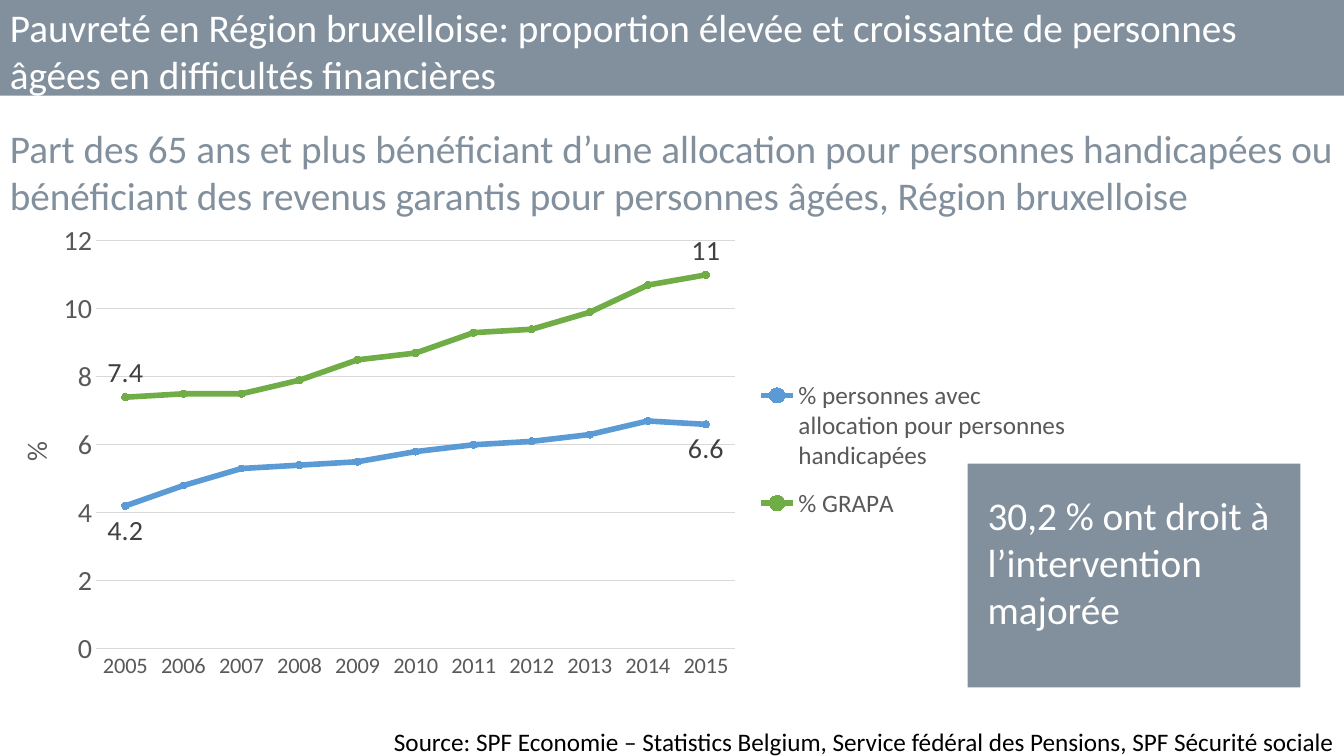
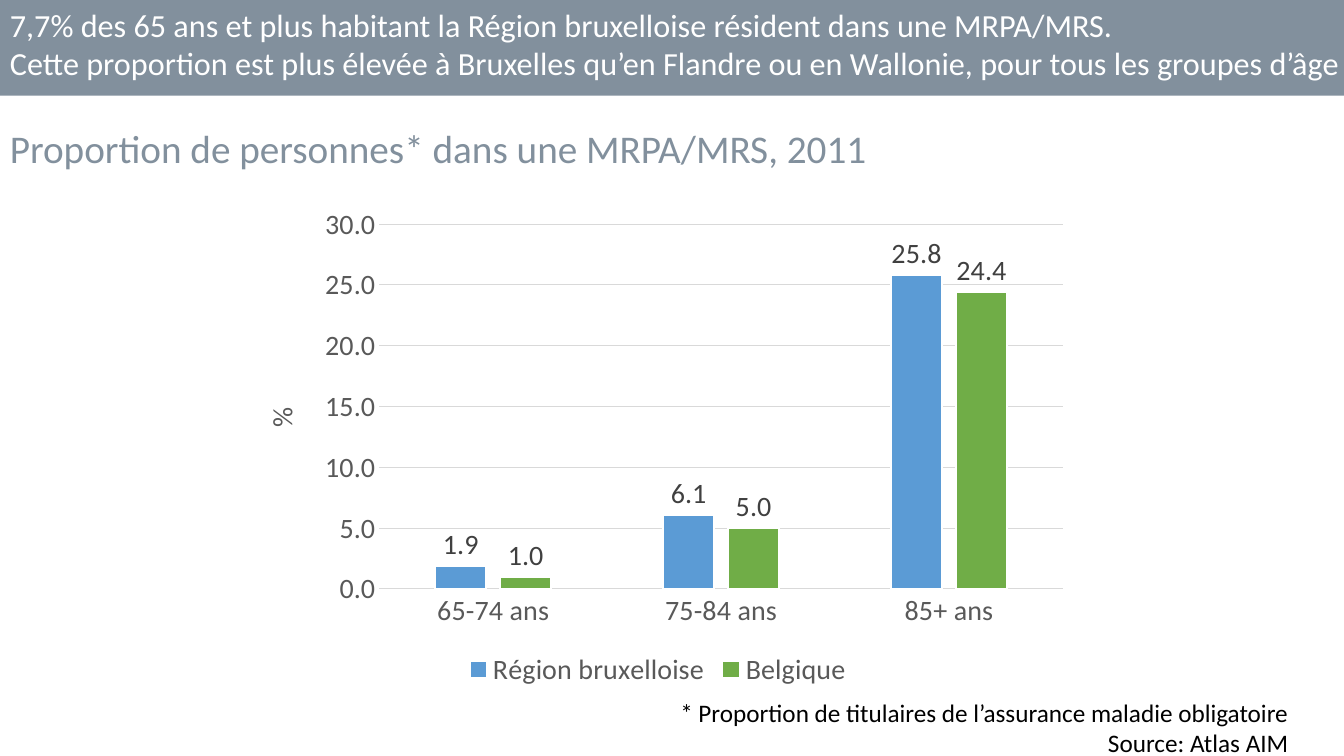
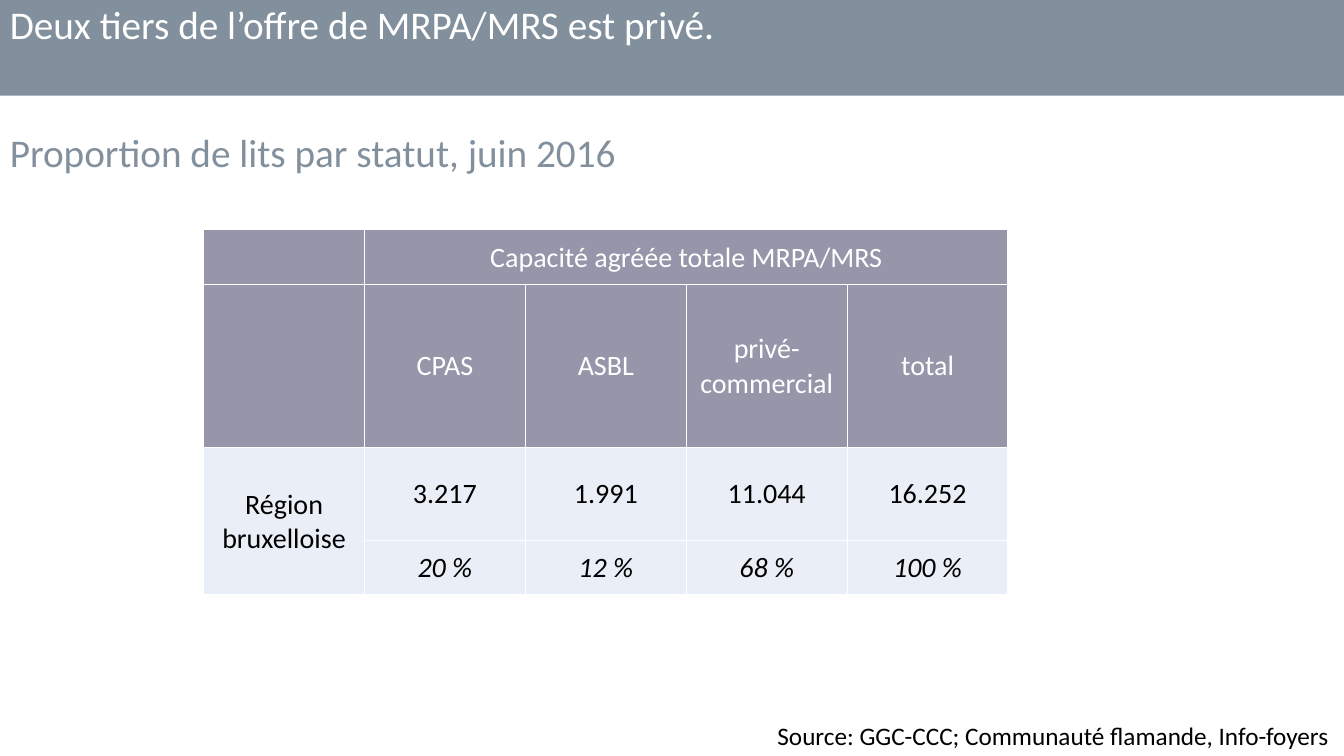
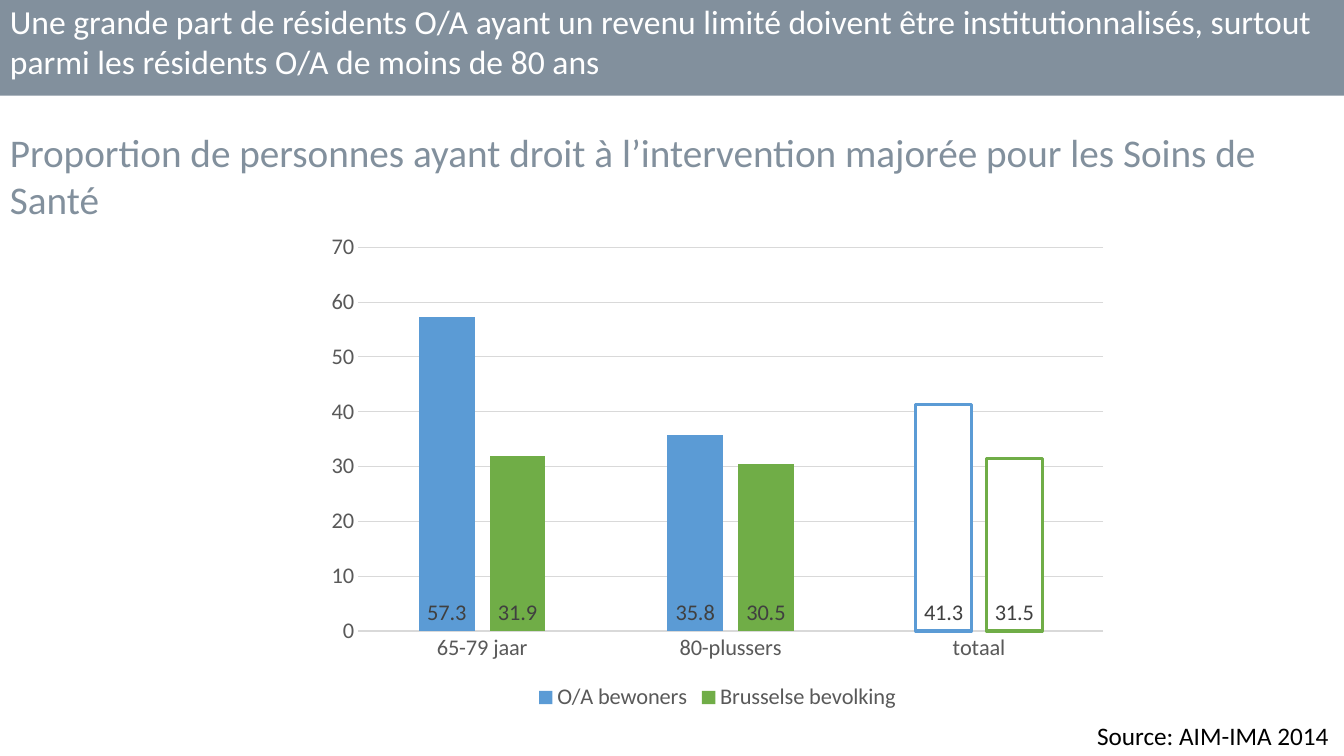
"""Build four slides on older people in the Brussels region: income, care homes and their residents."""
from dataclasses import dataclass
from typing import Optional

from lxml import etree
from pptx import Presentation
from pptx import util as u
from pptx.chart.data import CategoryChartData
from pptx.dml.color import RGBColor
from pptx.enum import chart as charts, shapes, text
from pptx.oxml.ns import qn

SLIDE_WIDTH, SLIDE_HEIGHT = u.Inches(13.33), u.Inches(7.5)
FONT = "Calibri"
SLATE = RGBColor(0x82, 0x90, 0x9D)
WHITE = RGBColor(0xFF, 0xFF, 0xFF)
BLACK = RGBColor(0, 0, 0)
BLUE = RGBColor(0x5B, 0x9B, 0xD5)
GREEN = RGBColor(0x70, 0xAD, 0x47)
AXIS_GREY = RGBColor(0x59, 0x59, 0x59)
LABEL_GREY = RGBColor(0x40, 0x40, 0x40)
GRID_GREY = RGBColor(0xD9, 0xD9, 0xD9)
HEADER_MAUVE = RGBColor(0x96, 0x96, 0xAA)
PALE_BLUE = RGBColor(0xEA, 0xEF, 0xF7)
LEFT, CENTER, RIGHT = text.PP_ALIGN.LEFT, text.PP_ALIGN.CENTER, text.PP_ALIGN.RIGHT


@dataclass(frozen=True)
class Area:
    """A rectangle in percent of the slide's width and height."""
    left: float
    top: float
    width: float
    height: float

    def emu(self) -> tuple[int, int, int, int]:
        """Return left, top, width and height in EMU."""
        return (across(self.left), down(self.top), across(self.width), down(self.height))


@dataclass(frozen=True)
class Caption:
    """Lines of text in one style."""
    area: Area
    lines: tuple[str, ...]
    size: float = 28
    color: RGBColor = SLATE
    align: text.PP_ALIGN = LEFT


@dataclass(frozen=True)
class Series:
    """One coloured data series; label_place is None for the default place."""
    name: str
    values: tuple[float, ...]
    color: RGBColor
    label_place: Optional[charts.XL_LABEL_POSITION] = None


@dataclass(frozen=True)
class Graph:
    """A chart with its scale, type sizes and optional inner layouts."""
    area: Area
    kind: charts.XL_CHART_TYPE
    categories: tuple[str, ...]
    series: tuple[Series, ...]
    top_value: float
    step: float
    category_size: float
    value_size: float
    legend_size: float
    legend_place: charts.XL_LEGEND_POSITION = charts.XL_LEGEND_POSITION.BOTTOM
    unit: str = ""
    number_format: str = "General"
    plot_layout: Optional[tuple[float, ...]] = None
    legend_layout: Optional[tuple[float, ...]] = None


BAND = Area(0, 0, 100, 12.67)
TABLE_AREA = Area(15.15, 30.4, 59.86, 48.27)
ROW_SHARES = (7.2, 21.6, 12.27, 7.2)
TABLE_ROWS = (
    ("", "Capacité agréée totale MRPA/MRS", "", "", ""),
    ("", "CPAS", "ASBL", "privé-\vcommercial", "total"),
    ("Région bruxelloise", "3.217", "1.991", "11.044", "16.252"),
    ("", "20 %", "12 %", "68 %", "100 %"),
)

ALLOWANCES = Graph(
    Area(0.83, 29.6, 79.2, 60.4), charts.XL_CHART_TYPE.LINE_MARKERS,
    tuple(str(year) for year in range(2005, 2016)),
    (Series("% personnes avec allocation pour personnes handicapées",
            (4.2, 4.8, 5.3, 5.4, 5.5, 5.8, 6, 6.1, 6.3, 6.7, 6.6),
            BLUE, charts.XL_LABEL_POSITION.BELOW),
     Series("% GRAPA", (7.4, 7.5, 7.5, 7.9, 8.5, 8.7, 9.3, 9.4, 9.9, 10.7, 11),
            GREEN, charts.XL_LABEL_POSITION.ABOVE)),
    12, 2, 16, 20, 18, charts.XL_LEGEND_POSITION.RIGHT, unit="%",
    plot_layout=(0.08, 0.03, 0.6, 0.9), legend_layout=(0.7, 0.3, 0.3, 0.38))

RESIDENTS = Graph(
    Area(17.55, 26.4, 62.8, 65.2), charts.XL_CHART_TYPE.COLUMN_CLUSTERED,
    ("65-74 ans", "75-84 ans", "85+ ans"),
    (Series("Région bruxelloise", (1.9, 6.1, 25.8), BLUE),
     Series("Belgique", (1, 5, 24.4), GREEN)),
    30, 5, 20, 20, 20, unit="%", number_format="0.0",
    plot_layout=(0.17, 0.05, 0.81, 0.74))

ENTITLED = Graph(
    Area(23.48, 29.6, 59.8, 65.07), charts.XL_CHART_TYPE.COLUMN_CLUSTERED,
    ("65-79 jaar", "80-plussers", "totaal"),
    (Series("O/A bewoners", (57.3, 35.8, 41.3), BLUE, charts.XL_LABEL_POSITION.INSIDE_BASE),
     Series("Brusselse bevolking", (31.9, 30.5, 31.5), GREEN,
            charts.XL_LABEL_POSITION.INSIDE_BASE)),
    70, 10, 16, 16, 16)


def across(share: float) -> int:
    """Turn a percentage of the slide's width into EMU."""
    return round(SLIDE_WIDTH * share / 100)


def down(share: float) -> int:
    """Turn a percentage of the slide's height into EMU."""
    return round(SLIDE_HEIGHT * share / 100)


def style_font(font, size: float, color: RGBColor) -> None:
    """Apply the deck's font at a size and colour."""
    font.name, font.size, font.bold = FONT, u.Pt(size), False
    font.color.rgb = color


def style_line(line, color: RGBColor, width: float) -> None:
    """Give a line a colour and a width in points."""
    line.color.rgb = color
    line.width = u.Pt(width)


def style_fill(fill, color: RGBColor) -> None:
    """Fill with one colour."""
    fill.solid()
    fill.fore_color.rgb = color


def add_panel(page, area: Area) -> None:
    """Draw a plain slate rectangle."""
    panel = page.shapes.add_shape(shapes.MSO_SHAPE.RECTANGLE, *area.emu())
    panel.shadow.inherit = False
    style_fill(panel.fill, SLATE)
    panel.line.fill.background()


def add_caption(page, caption: Caption):
    """Draw a wrapping text box and return it."""
    box = page.shapes.add_textbox(*caption.area.emu())
    frame = box.text_frame
    frame.word_wrap = True
    frame.auto_size = text.MSO_AUTO_SIZE.SHAPE_TO_FIT_TEXT
    frame.text = "\n".join(caption.lines)
    for para in frame.paragraphs:
        para.alignment = caption.align
        style_font(para.font, caption.size, caption.color)
    return box


def add_page(deck, title: Caption, subtitle: Caption, source: Caption):
    """Add a slide with its band, title, subtitle and source."""
    page = deck.slides.add_slide(deck.slide_layouts[6])
    add_panel(page, BAND)
    boxes = [add_caption(page, caption) for caption in (title, subtitle, source)]
    return page, boxes[-1]


def make_title(top: float, height: float, size: float, *lines: str, width: float = 100) -> Caption:
    """Describe a white title on the band."""
    return Caption(Area(0, top, width, height), lines, size, WHITE)


def make_source(left: float, top: float, right: float, height: float, *lines: str) -> Caption:
    """Describe a source note aligned to the right."""
    return Caption(Area(left, top, right - left, height), lines, 18, BLACK, RIGHT)


def make_layout(shares: tuple[float, ...], inner: bool):
    """Build a manual chart layout from shares of the chart's size."""
    layout = etree.Element(qn("c:layout"))
    manual = etree.SubElement(layout, qn("c:manualLayout"))
    settings = [("layoutTarget", "inner")] if inner else []
    settings += [("xMode", "edge"), ("yMode", "edge")]
    settings += zip("xywh", map(str, shares))
    for tag, value in settings:
        etree.SubElement(manual, qn(f"c:{tag}")).set("val", value)
    return layout


def apply_layouts(chart, graph: Graph) -> None:
    """Place the plot and the legend where the graph asks for it."""
    if graph.plot_layout:
        plot_area = chart.element.find(".//" + qn("c:plotArea"))
        for old in plot_area.findall(qn("c:layout")):
            plot_area.remove(old)
        plot_area.insert(0, make_layout(graph.plot_layout, True))
    if graph.legend_layout:
        legend = chart.element.find(".//" + qn("c:legend"))
        for old in legend.findall(qn("c:layout")):
            legend.remove(old)
        legend.find(qn("c:overlay")).addprevious(make_layout(graph.legend_layout, False))


def style_axes(chart, graph: Graph) -> None:
    """Set scale, fonts, lines and title of both axes."""
    category, value = chart.category_axis, chart.value_axis
    for axis, size in ((category, graph.category_size), (value, graph.value_size)):
        axis.major_tick_mark = axis.minor_tick_mark = charts.XL_TICK_MARK.NONE
        style_font(axis.tick_labels.font, size, AXIS_GREY)
    style_line(category.format.line, GRID_GREY, 0.75)
    value.format.line.fill.background()
    value.has_major_gridlines = True
    style_line(value.major_gridlines.format.line, GRID_GREY, 0.75)
    value.minimum_scale, value.maximum_scale, value.major_unit = 0, graph.top_value, graph.step
    value.tick_labels.number_format = graph.number_format
    value.tick_labels.number_format_is_linked = False
    if graph.unit:
        frame = value.axis_title.text_frame
        frame.text = graph.unit
        style_font(frame.paragraphs[0].font, graph.value_size, AXIS_GREY)


def add_graph(page, graph: Graph):
    """Draw a chart frame with axes and legend and return the chart."""
    data = CategoryChartData(number_format=graph.number_format)
    data.categories = graph.categories
    for item in graph.series:
        data.add_series(item.name, item.values)
    chart = page.shapes.add_chart(graph.kind, *graph.area.emu(), data).chart
    chart.has_title = False
    style_font(chart.font, 10, BLACK)
    chart.plots[0].vary_by_categories = False
    style_axes(chart, graph)
    chart.has_legend = True
    chart.legend.position = graph.legend_place
    chart.legend.include_in_layout = False
    style_font(chart.legend.font, graph.legend_size, AXIS_GREY)
    apply_layouts(chart, graph)
    return chart


def add_lines(page, graph: Graph) -> None:
    """Draw a line chart that labels its first and last points."""
    chart = add_graph(page, graph)
    for line, item in zip(chart.plots[0].series, graph.series):
        line.smooth = False
        style_line(line.format.line, item.color, 4)
        line.marker.style, line.marker.size = charts.XL_MARKER_STYLE.CIRCLE, 5
        style_fill(line.marker.format.fill, item.color)
        style_line(line.marker.format.line, item.color, 0.75)
        line.data_labels.show_value = False
        for index in (0, len(item.values) - 1):
            label = line.points[index].data_label
            style_font(label.font, graph.value_size, LABEL_GREY)
            label.position = item.label_place


def add_columns(page, graph: Graph, edge: Optional[RGBColor] = None, hollow_last: bool = False) -> None:
    """Draw a column chart, with white edges or a hollow last category."""
    chart = add_graph(page, graph)
    plot = chart.plots[0]
    plot.gap_width, plot.overlap = 219, -27
    for column, item in zip(plot.series, graph.series):
        column.invert_if_negative = False
        style_fill(column.format.fill, item.color)
        if edge is not None:
            style_line(column.format.line, edge, 1.5)
        if hollow_last:
            total = column.points[len(item.values) - 1].format
            style_fill(total.fill, WHITE)
            style_line(total.line, item.color, 2.25)
        labels = column.data_labels
        labels.show_value = True
        labels.number_format, labels.number_format_is_linked = graph.number_format, False
        style_font(labels.font, graph.value_size, LABEL_GREY)
        if item.label_place is not None:
            labels.position = item.label_place


def add_borders(cell) -> None:
    """Draw thin white borders around a table cell."""
    properties = cell._tc.get_or_add_tcPr()
    for index, side in enumerate(("lnL", "lnR", "lnT", "lnB")):
        border = etree.Element(qn(f"a:{side}"), w=str(u.Pt(1)))
        fill = etree.SubElement(border, qn("a:solidFill"))
        etree.SubElement(fill, qn("a:srgbClr"), val=str(WHITE))
        properties.insert(index, border)


def add_beds_table(page) -> None:
    """Draw the table of beds by status."""
    columns = len(TABLE_ROWS[0])
    table = page.shapes.add_table(len(TABLE_ROWS), columns, *TABLE_AREA.emu()).table
    table.first_row = table.horz_banding = False
    for column in table.columns:
        column.width = across(TABLE_AREA.width / columns)
    for row_index, (share, words) in enumerate(zip(ROW_SHARES, TABLE_ROWS)):
        table.rows[row_index].height = down(share)
        header = row_index < 2
        for column_index, word in enumerate(words):
            cell = table.cell(row_index, column_index)
            style_fill(cell.fill, HEADER_MAUVE if header else PALE_BLUE)
            add_borders(cell)
            cell.vertical_anchor = text.MSO_ANCHOR.MIDDLE
            cell.margin_left = cell.margin_right = cell.margin_top = u.Inches(0.01)
            cell.margin_bottom = 0
            cell.text_frame.text = word
            para = cell.text_frame.paragraphs[0]
            para.alignment = CENTER
            style_font(para.font, 20, WHITE if header else BLACK)
            para.font.italic = row_index == 3
    table.cell(0, 1).merge(table.cell(0, columns - 1))
    table.cell(2, 0).merge(table.cell(3, 0))


def build_income(deck) -> None:
    """Build the slide on allowances."""
    page, _ = add_page(
        deck,
        make_title(-0.27, 13.87, 28, "Pauvreté en Région bruxelloise: proportion élevée et croissante "
                   "de personnes âgées en difficultés financières"),
        Caption(Area(0, 15.73, 100, 13.87),
                ("Part des 65 ans et plus bénéficiant d’une allocation pour personnes handicapées ou "
                 "bénéficiant des revenus garantis pour personnes âgées, Région bruxelloise",)),
        make_source(24.53, 95.47, 100, 5.33, "Source: SPF Economie – Statistics Belgium, "
                    "Service fédéral des Pensions, SPF Sécurité sociale"))
    add_panel(page, Area(72, 61.33, 24.75, 29.6))
    add_caption(page, Caption(Area(72.75, 64.27, 24, 20.13),
                              ("30,2 % ont droit à l’intervention majorée",), color=WHITE))
    add_lines(page, ALLOWANCES)


def build_residents(deck) -> None:
    """Build the slide on the share of people in care homes."""
    page, source = add_page(
        deck,
        make_title(0, 11.73, 23,
                   "7,7% des 65 ans et plus habitant la Région bruxelloise résident dans une MRPA/MRS.",
                   "Cette proportion est plus élevée à Bruxelles qu’en Flandre ou en Wallonie, "
                   "pour tous les groupes d’âge", width=101.7),
        Caption(Area(0, 15.73, 100, 7.6), ("Proportion de personnes* dans une MRPA/MRS, 2011",)),
        make_source(44.25, 91.6, 99.6, 9.47,
                    "* Proportion de titulaires de l’assurance maladie obligatoire", "Source: Atlas AIM"))
    note = source.text_frame.paragraphs[0]
    note._p.get_or_add_pPr().set("marR", str(across(3)))
    add_columns(page, RESIDENTS, edge=WHITE)


def build_beds(deck) -> None:
    """Build the slide on beds by status."""
    page, _ = add_page(
        deck,
        make_title(-0.67, 7.6, 28, "Deux tiers de l’offre de MRPA/MRS est privé."),
        Caption(Area(0, 16.27, 100, 7.6), ("Proportion de lits par statut, juin 2016",)),
        make_source(55.2, 94.67, 99.6, 5.33, "Source: GGC-CCC; Communauté flamande, Info-foyers"))
    add_beds_table(page)


def build_entitled(deck) -> None:
    """Build the slide on residents with a limited income."""
    page, _ = add_page(
        deck,
        make_title(-0.53, 12.13, 24, "Une grande part de résidents O/A ayant un revenu limité doivent être "
                   "institutionnalisés, surtout parmi les résidents O/A de moins de 80 ans"),
        Caption(Area(0, 16.27, 100, 13.87),
                ("Proportion de personnes ayant droit à l’intervention majorée pour les Soins de Santé",)),
        make_source(46, 94.67, 99.6, 5.33, "Source: AIM-IMA 2014"))
    add_columns(page, ENTITLED, hollow_last=True)


def main() -> None:
    """Build and save the deck."""
    deck = Presentation()
    deck.slide_width, deck.slide_height = SLIDE_WIDTH, SLIDE_HEIGHT
    for build in (build_income, build_residents, build_beds, build_entitled):
        build(deck)
    deck.save("out.pptx")


if __name__ == "__main__":
    main()
